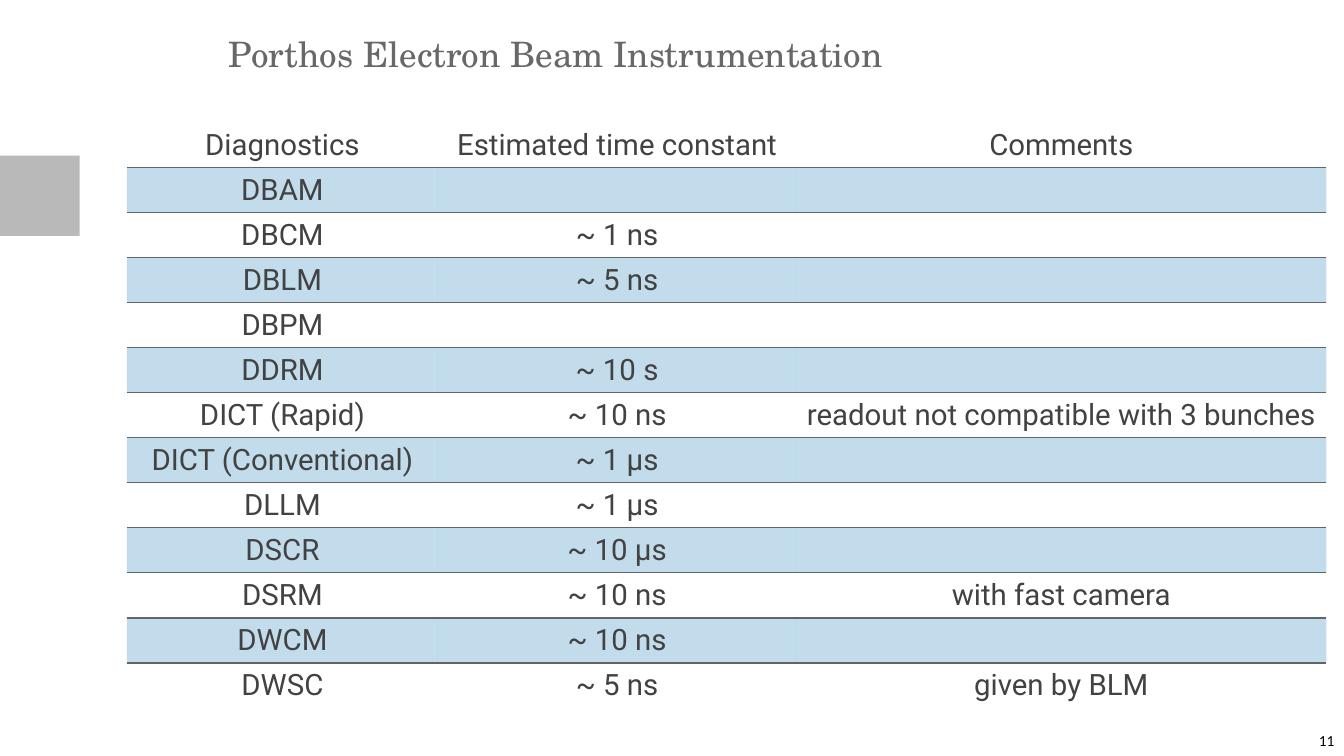
from lxml import etree
from pptx import Presentation
from pptx.dml.color import RGBColor
from pptx.enum import shapes, text
from pptx.oxml import ns
from pptx.util import Cm, Pt

NO_STYLE = "{2D5ABB26-0587-4C30-8999-92F81FD0307C}"
RULE, BAND, INK = "5F6568", "2E87BB", "424242"


def style(p, size, font, colour):
    for r in p.runs:
        r.font.size = Pt(size)
        r.font.name = font
        r.font.color.rgb = RGBColor.from_string(colour)


def add_rule(cell, side):
    """Draw a 2 pt border on one side of a cell: lnT or lnB."""
    ln = etree.Element(ns.qn(f"a:{side}"), w=str(Pt(2)))
    fill = etree.SubElement(ln, ns.qn("a:solidFill"))
    etree.SubElement(fill, ns.qn("a:srgbClr"), val=RULE)
    cell._tc.get_or_add_tcPr().insert(0, ln)


prs = Presentation()
prs.slide_width, prs.slide_height = Cm(67.74), Cm(38.1)
s = prs.slides.add_slide(prs.slide_layouts[5])

# Side marker
marker = s.shapes.add_shape(shapes.MSO_SHAPE.RECTANGLE, 0, Cm(7.85), Cm(4.01), Cm(4.04))
marker.shadow.inherit = False
marker.fill.solid()
marker.fill.fore_color.rgb = RGBColor.from_string("B9B9B9")
marker.line.fill.background()

# Title
title = s.shapes.title
title.left, title.top, title.width, title.height = Cm(11.53), Cm(1.63), Cm(53.06), Cm(5.18)
tf = title.text_frame
tf.text = "Porthos Electron Beam Instrumentation"
tf.margin_left = tf.margin_right = tf.margin_top = tf.margin_bottom = 0
tf.vertical_anchor = text.MSO_ANCHOR.TOP
tf.paragraphs[0].alignment = text.PP_ALIGN.LEFT
style(tf.paragraphs[0], 50, "TeX Gyre Schola", "686868")

# Diagnostics table
rows = [
    ("Diagnostics", "Estimated time constant", "Comments"),
    ("DBAM", "", ""),
    ("DBCM", "~ 1 ns", ""),
    ("DBLM", "~ 5 ns", ""),
    ("DBPM", "", ""),
    ("DDRM", "~ 10 s", ""),
    ("DICT (Rapid)", "~ 10 ns", "readout not compatible with 3 bunches"),
    ("DICT (Conventional)", "~ 1 µs", ""),
    ("DLLM", "~ 1 µs", ""),
    ("DSCR", "~ 10 µs", ""),
    ("DSRM", "~ 10 ns", "with fast camera"),
    ("DWCM", "~ 10 ns", ""),
    ("DWSC", "~ 5 ns", "given by BLM"),
]
col_widths = [15.67, 18.06, 26.72]
row_height = 2.27
table = s.shapes.add_table(len(rows), len(col_widths), Cm(6.4), Cm(6.17),
                           Cm(sum(col_widths)), Cm(row_height * len(rows))).table
table._tbl.tblPr.find(ns.qn("a:tableStyleId")).text = NO_STYLE
table.horz_banding = False
for column, width in zip(table.columns, col_widths):
    column.width = Cm(width)

for i, row in enumerate(rows):
    table.rows[i].height = Cm(row_height)
    for j, value in enumerate(row):
        cell = table.cell(i, j)
        cell.text = value
        cell.margin_left = cell.margin_right = cell.margin_top = cell.margin_bottom = Cm(0.15)
        cell.vertical_anchor = text.MSO_ANCHOR.MIDDLE
        p = cell.text_frame.paragraphs[0]
        p.alignment = text.PP_ALIGN.CENTER
        style(p, 42, "Roboto", INK)
        if i % 2:
            cell.fill.solid()
            cell.fill.fore_color.rgb = RGBColor.from_string(BAND)
            colour = cell._tc.tcPr.find(".//" + ns.qn("a:srgbClr"))
            etree.SubElement(colour, ns.qn("a:alpha"), val="29000")
        else:
            cell.fill.background()
        if i < len(rows) - 1:
            add_rule(cell, "lnB")
        if i > 0:
            add_rule(cell, "lnT")

# Page number
number = s.shapes.add_textbox(Cm(66.47), Cm(36.83), Cm(0.81), Cm(0.97))
tf = number.text_frame
tf.text = "11"
tf.word_wrap = False
tf.margin_left = tf.margin_right = tf.margin_top = tf.margin_bottom = 0
style(tf.paragraphs[0], 22, "Calibri", "000000")

prs.save("out.pptx")
